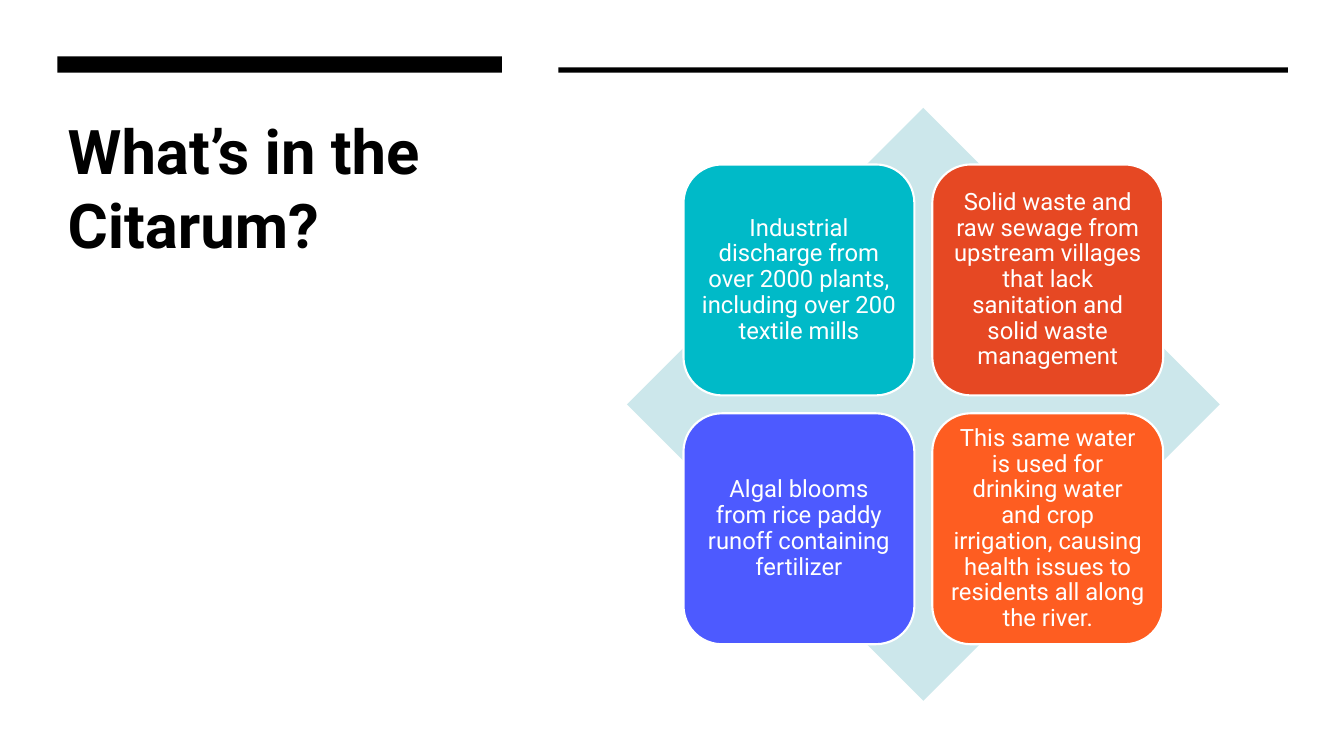
import pptx
import pptx.dml.color
import pptx.enum.shapes
import pptx.enum.text
import pptx.util

Cm = pptx.util.Cm
Pt = pptx.util.Pt
RGBColor = pptx.dml.color.RGBColor
SHAPE = pptx.enum.shapes.MSO_SHAPE
ALIGN = pptx.enum.text.PP_ALIGN
ANCHOR = pptx.enum.text.MSO_ANCHOR

FONT = "Roboto"
BLACK = RGBColor(0x00, 0x00, 0x00)
WHITE = RGBColor(0xFF, 0xFF, 0xFF)
PALE_BLUE = RGBColor(0xCC, 0xE7, 0xEB)
TEAL = RGBColor(0x00, 0xBA, 0xC8)
RED = RGBColor(0xE6, 0x48, 0x23)
BLUE = RGBColor(0x4D, 0x5A, 0xFF)
ORANGE = RGBColor(0xFE, 0x5D, 0x21)

# Lengths in centimetres
LEFT_MARGIN, COLUMN_WIDTH = 1.45, 11.2
CONTENT_TOP = 2.72
DIAMOND_LEFT, DIAMOND_SIZE = 15.8, 14.94
TILE_SIZE, TILE_PITCH = 5.82, 6.27
TILE_OFFSET = (DIAMOND_SIZE - TILE_PITCH - TILE_SIZE) / 2

POLLUTANTS = [
    (TEAL, "Industrial discharge from over 2000 plants, including over 200 textile mills"),
    (RED, "Solid waste and raw sewage from upstream villages that lack sanitation "
          "and solid waste management"),
    (BLUE, "Algal blooms from rice paddy runoff containing fertilizer"),
    (ORANGE, "This same water is used for drinking water and crop irrigation, "
             "causing health issues to residents all along the river."),
]


def add_filled_shape(shapes, kind, left, top, width, height, fill):
    """Add a flat shape without outline; lengths are in centimetres."""
    shape = shapes.add_shape(kind, Cm(left), Cm(top), Cm(width), Cm(height))
    shape.shadow.inherit = False
    shape.fill.solid()
    shape.fill.fore_color.rgb = fill
    shape.line.fill.background()
    return shape


def write_text(frame, text, size, color, align, bold=False):
    frame.text = text
    frame.word_wrap = True
    frame.auto_size = pptx.enum.text.MSO_AUTO_SIZE.NONE
    para = frame.paragraphs[0]
    para.alignment = align
    font = para.runs[0].font
    font.name = FONT
    font.size = Pt(size)
    font.bold = bold
    font.color.rgb = color
    return para


def set_title(page, text):
    title = page.shapes.title
    title.left, title.top = Cm(LEFT_MARGIN), Cm(CONTENT_TOP)
    title.width, title.height = Cm(COLUMN_WIDTH), Cm(9.35)
    write_text(title.text_frame, text, 44, BLACK, ALIGN.LEFT, bold=True)
    title.text_frame.vertical_anchor = ANCHOR.TOP


def add_tile(shapes, left, top, fill, text):
    tile = add_filled_shape(shapes, SHAPE.ROUNDED_RECTANGLE, left, top,
                            TILE_SIZE, TILE_SIZE, fill)
    tile.line.color.rgb = WHITE
    tile.line.width = Pt(1.5)
    frame = tile.text_frame
    frame.margin_left = frame.margin_right = Cm(0.18)
    frame.margin_top = frame.margin_bottom = Cm(0.18)
    frame.vertical_anchor = ANCHOR.MIDDLE
    para = write_text(frame, text, 17, WHITE, ALIGN.CENTER)
    para.line_spacing = 0.9


def add_matrix(page):
    """Add the diamond with its two-by-two grid of tiles."""
    shapes = page.shapes.add_group_shape().shapes
    add_filled_shape(shapes, SHAPE.DIAMOND, DIAMOND_LEFT, CONTENT_TOP,
                     DIAMOND_SIZE, DIAMOND_SIZE, PALE_BLUE)
    for index, (fill, text) in enumerate(POLLUTANTS):
        row, column = divmod(index, 2)
        add_tile(shapes,
                 DIAMOND_LEFT + TILE_OFFSET + column * TILE_PITCH,
                 CONTENT_TOP + TILE_OFFSET + row * TILE_PITCH,
                 fill, text)


def main():
    deck = pptx.Presentation()
    deck.slide_width, deck.slide_height = Cm(33.87), Cm(19.05)
    page = deck.slides.add_slide(deck.slide_layouts.get_by_name("Title Only"))
    page.background.fill.solid()
    page.background.fill.fore_color.rgb = WHITE

    set_title(page, "What’s in the Citarum?")
    add_filled_shape(page.shapes, SHAPE.RECTANGLE, LEFT_MARGIN, 1.42,
                     COLUMN_WIDTH, 0.41, BLACK)
    add_filled_shape(page.shapes, SHAPE.RECTANGLE, 14.07, 1.7, 18.39, 0.13, BLACK)
    add_matrix(page)
    deck.save("out.pptx")


if __name__ == "__main__":
    main()
